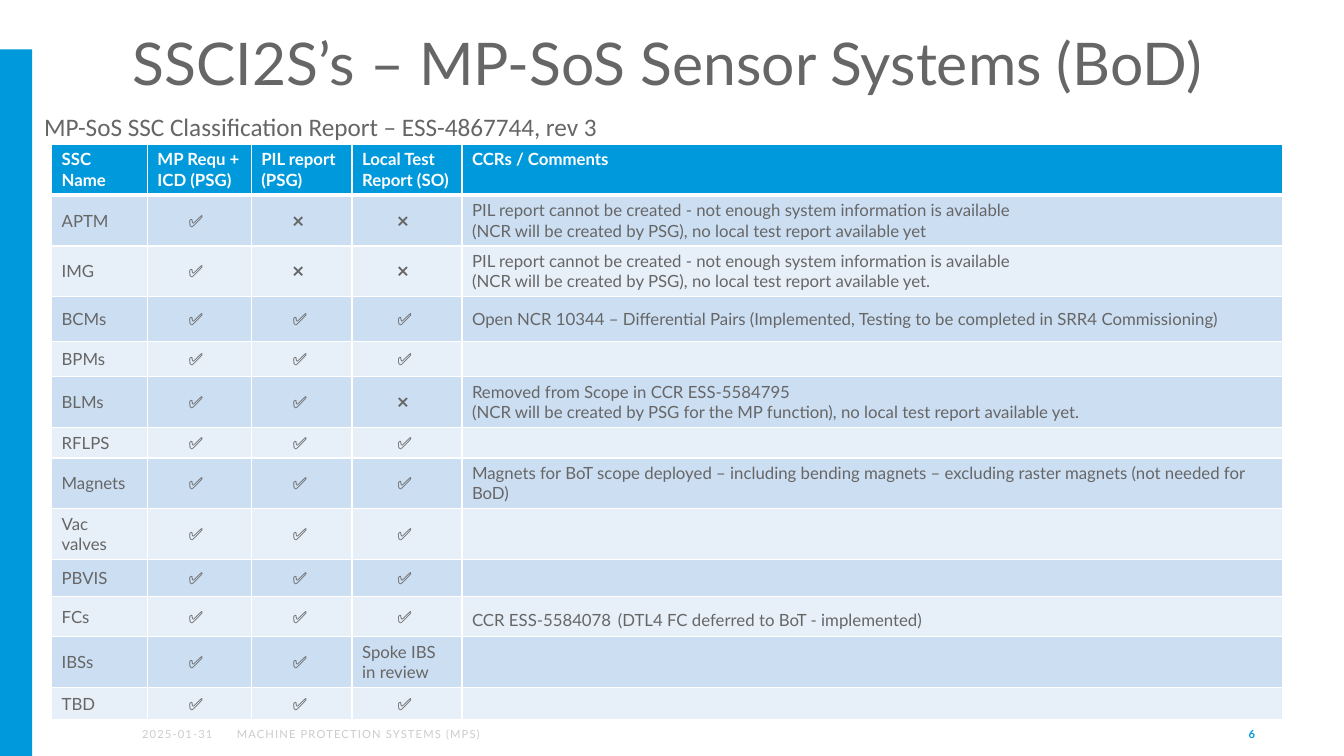
"""Build the sensor systems status slide for the machine protection review."""
import dataclasses

import lxml.etree
import pptx
import pptx.dml.color
import pptx.enum.shapes
import pptx.enum.text
import pptx.oxml.ns
import pptx.util

RGBColor = pptx.dml.color.RGBColor
ANCHOR = pptx.enum.text.MSO_ANCHOR
ALIGN = pptx.enum.text.PP_ALIGN

BLUE = RGBColor(0x00, 0x99, 0xDC)
GREY = RGBColor(0x66, 0x66, 0x66)
PALE_GREY = RGBColor(0xCC, 0xCC, 0xCC)
WHITE = RGBColor(0xFF, 0xFF, 0xFF)
BLACK = RGBColor(0x00, 0x00, 0x00)
BAND_FILLS = (RGBColor(0xCC, 0xDE, 0xF2), RGBColor(0xE7, 0xEF, 0xF9))

SLIDE_WIDTH = pptx.util.Inches(13.333)
SLIDE_HEIGHT = pptx.util.Inches(7.5)
FOOTER_TOP, FOOTER_HEIGHT = 94.4, 5.33

COLUMN_SHARES = (7.13, 7.73, 7.5, 8.18, 61.05)
ROW_SHARES = (6.73, 6.73, 6.73, 5.95, 4.63, 6.73, 4, 6.67, 6.73, 4.9, 5.3, 6.73, 4.25)
MARK_INDENTS = {1: 0.31, 2: 0.31, 3: 0.35}
YES, NO = "✅", "❌"

HEADINGS = (
    "SSC Name",
    "MP Requ + ICD (PSG)",
    "PIL report\n(PSG)",
    "Local Test Report (SO)",
    "CCRs / Comments",
)
NO_PIL = (
    "PIL report cannot be created - not enough system information is available\n"
    "(NCR will be created by PSG), no local test report available yet"
)
SYSTEMS = (
    ("APTM", YES, NO, NO, NO_PIL),
    ("IMG", YES, NO, NO, NO_PIL + "."),
    ("BCMs", YES, YES, YES,
     "Open NCR 10344 – Differential Pairs (Implemented, Testing to be completed in SRR4 Commissioning)"),
    ("BPMs", YES, YES, YES, ""),
    ("BLMs", YES, YES, NO,
     "Removed from Scope in CCR ESS-5584795\n"
     "(NCR will be created by PSG for the MP function), no local test report available yet."),
    ("RFLPS", YES, YES, YES, ""),
    ("Magnets", YES, YES, YES,
     "Magnets for BoT scope deployed – including bending magnets – "
     "excluding raster magnets (not needed for BoD)"),
    ("Vac valves", YES, YES, YES, ""),
    ("PBVIS", YES, YES, YES, ""),
    ("FCs", YES, YES, YES, "CCR ESS-5584078| |(DTL4 FC deferred to BoT - implemented)"),
    ("IBSs", YES, YES, "Spoke IBS in review", ""),
    ("TBD", YES, YES, YES, ""),
)


@dataclasses.dataclass(frozen=True)
class Style:
    """Look of one run of text."""
    size: float
    color: RGBColor
    bold: bool = False
    font: str = "Lato"
    spacing: float = 0


TITLE = Style(42, GREY)
REPORT = Style(18, GREY, font="Calibri")
HEADING = Style(12, WHITE, bold=True)
ENTRY = Style(12, GREY)
WIDE_SPACE = Style(18, BLACK)
FOOTER = Style(8, PALE_GREY, spacing=0.8)
PAGE = Style(8, BLUE, bold=True)


def across(share):
    """Turn a percentage of the slide width into a length."""
    return round(SLIDE_WIDTH * share / 100)


def down(share):
    """Turn a percentage of the slide height into a length."""
    return round(SLIDE_HEIGHT * share / 100)


def area(left, top, width, height):
    """Turn four percentages into left, top, width and height."""
    return across(left), down(top), across(width), down(height)


def add_run(paragraph, text, style):
    """Append one styled run to a paragraph."""
    run = paragraph.add_run()
    run.text = text
    run.font.name = style.font
    run.font.size = pptx.util.Pt(style.size)
    run.font.bold = style.bold
    run.font.color.rgb = style.color
    if style.spacing:
        run.font._element.set("spc", str(round(style.spacing * 100)))


def add_label(slide, box, text, style, anchor=ANCHOR.TOP, align=ALIGN.LEFT):
    """Add a wrapping text box with a single line."""
    frame = slide.shapes.add_textbox(*area(*box)).text_frame
    frame.word_wrap = True
    frame.vertical_anchor = anchor
    frame.paragraphs[0].alignment = align
    add_run(frame.paragraphs[0], text, style)


def add_title(slide, text):
    """Move and fill the title placeholder."""
    title = slide.shapes.title
    title.left, title.top, title.width, title.height = area(9.08, 3.87, 81.15, 9.6)
    frame = title.text_frame
    frame.auto_size = pptx.enum.text.MSO_AUTO_SIZE.NONE
    frame.vertical_anchor = ANCHOR.TOP
    frame.margin_bottom = pptx.util.Inches(0.02)
    frame.paragraphs[0].alignment = ALIGN.CENTER
    frame.paragraphs[0].line_spacing = 0.9
    add_run(frame.paragraphs[0], text, TITLE)


def add_side_band(slide):
    """Add the blue band along the left edge."""
    band = slide.shapes.add_shape(
        pptx.enum.shapes.MSO_SHAPE.RECTANGLE, *area(0, 6.53, 2.4, 93.47))
    band.shadow.inherit = False
    band.fill.solid()
    band.fill.fore_color.rgb = BLUE
    band.line.fill.background()


def set_borders(cell, top, bottom):
    """Draw white cell borders, with given top and bottom widths in points."""
    properties = cell._tc.get_or_add_tcPr()
    sides = (("lnL", 1), ("lnR", 1), ("lnT", top), ("lnB", bottom))
    for position, (side, width) in enumerate(sides):
        line = lxml.etree.Element(pptx.oxml.ns.qn(f"a:{side}"), w=str(pptx.util.Pt(width)))
        fill = lxml.etree.SubElement(line, pptx.oxml.ns.qn("a:solidFill"))
        lxml.etree.SubElement(fill, pptx.oxml.ns.qn("a:srgbClr"), val=str(WHITE))
        properties.insert(position, line)


def write_cell(cell, text, style, indent):
    """Write lines into a cell, each split into runs at the bars."""
    frame = cell.text_frame
    for number, line in enumerate(text.split("\n")):
        paragraph = frame.add_paragraph() if number else frame.paragraphs[0]
        if line in (YES, NO):
            paragraph._p.get_or_add_pPr().set("marL", str(pptx.util.Inches(indent)))
        if not line:
            lxml.etree.SubElement(
                paragraph._p, pptx.oxml.ns.qn("a:endParaRPr"), sz=str(style.size * 100))
            continue
        for piece in line.split("|"):
            add_run(paragraph, piece, WIDE_SPACE if piece == " " else style)


def add_status_table(slide):
    """Add the table of sensor systems and their reports."""
    lines = (HEADINGS,) + SYSTEMS
    table = slide.shapes.add_table(
        len(lines), len(HEADINGS),
        *area(3.84, 19.07, sum(COLUMN_SHARES), sum(ROW_SHARES))).table
    for column, share in zip(table.columns, COLUMN_SHARES):
        column.width = across(share)
    for row, share in zip(table.rows, ROW_SHARES):
        row.height = down(share)
    for r, line in enumerate(lines):
        for c, text in enumerate(line):
            cell = table.cell(r, c)
            cell.vertical_anchor = ANCHOR.MIDDLE if r else ANCHOR.TOP
            cell.fill.solid()
            cell.fill.fore_color.rgb = BAND_FILLS[(r - 1) % 2] if r else BLUE
            set_borders(cell, top=3 if r == 1 else 1, bottom=1 if r else 3)
            write_cell(cell, text, ENTRY if r else HEADING, MARK_INDENTS.get(c, 0))


def main():
    """Build the slide and save it."""
    deck = pptx.Presentation()
    deck.slide_width, deck.slide_height = SLIDE_WIDTH, SLIDE_HEIGHT
    slide = deck.slides.add_slide(deck.slide_layouts[5])
    add_side_band(slide)
    add_title(slide, "SSCI2S’s – MP-SoS Sensor Systems (BoD)")
    footers = (
        (16.88, 35.4, "MACHINE PROTECTION SYSTEMS (MPS)", FOOTER, ALIGN.LEFT),
        (71.63, 22.5, "6", PAGE, ALIGN.RIGHT),
        (9.83, 6.83, "2025-01-31", FOOTER, ALIGN.LEFT),
    )
    for left, width, text, style, align in footers:
        add_label(slide, (left, FOOTER_TOP, width, FOOTER_HEIGHT), text, style,
                  ANCHOR.MIDDLE, align)
    add_status_table(slide)
    add_label(slide, (2.55, 14.13, 43.58, 5.33),
              "MP-SoS SSC Classification Report – ESS-4867744, rev 3", REPORT)
    deck.save("out.pptx")


if __name__ == "__main__":
    main()
